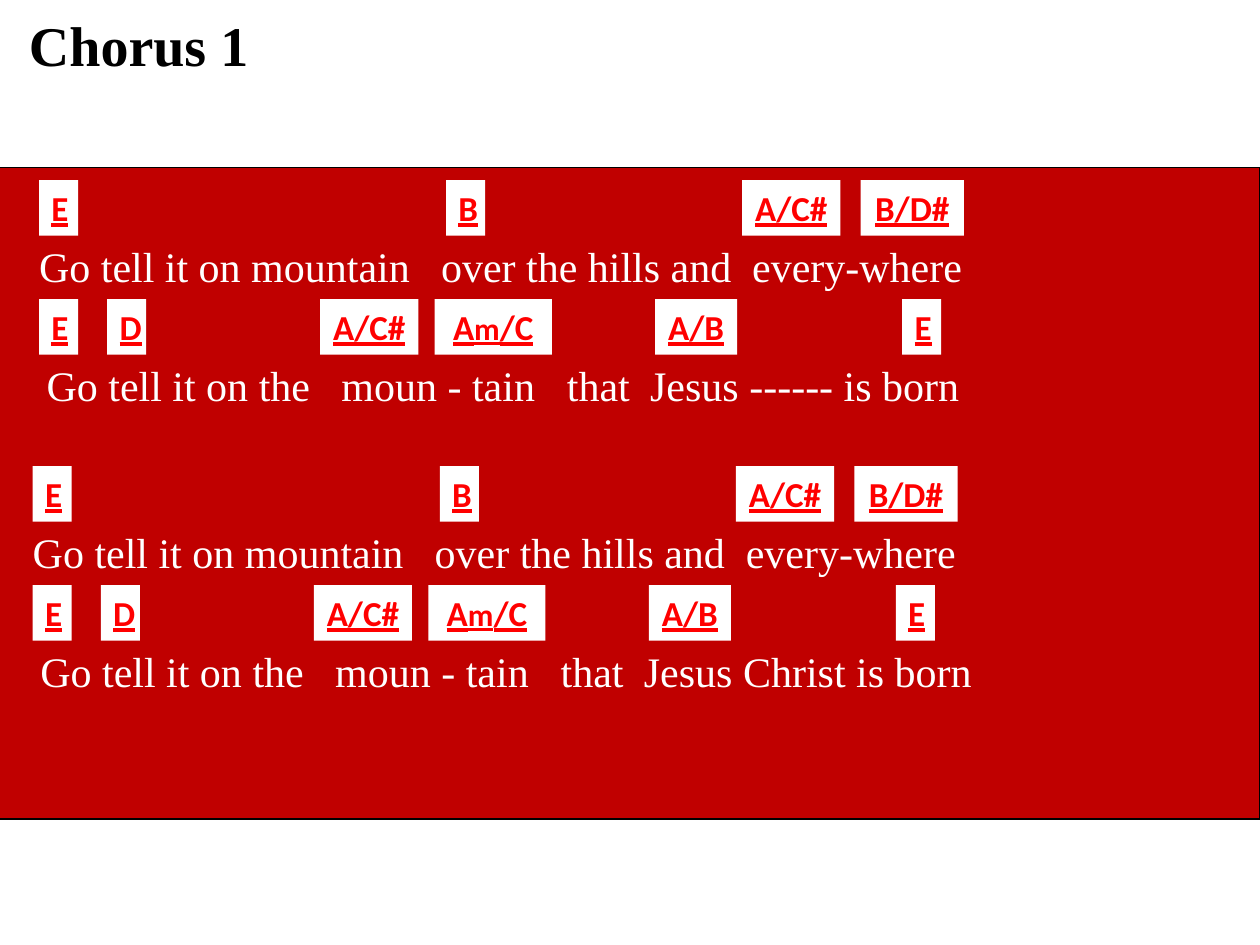
from dataclasses import dataclass

import pptx
import pptx.dml.color
import pptx.enum.shapes
import pptx.enum.text
import pptx.oxml.ns
import pptx.util
from lxml import etree

RGBColor = pptx.dml.color.RGBColor
ALIGN = pptx.enum.text.PP_ALIGN
WHITE = RGBColor(0xFF, 0xFF, 0xFF)
BLACK = RGBColor(0x00, 0x00, 0x00)
RED = RGBColor(0xFF, 0x00, 0x00)
DARK_RED = RGBColor(0xC0, 0x00, 0x00)
SERIF, SANS = "Times New Roman", "Calibri"

# Grid of 100 columns by 75 rows
prs = pptx.Presentation()
prs.slide_width, prs.slide_height = pptx.util.Inches(10), pptx.util.Inches(7.5)
COL, ROW = prs.slide_width / 100, prs.slide_height / 75

CHORD_COLS = {"E": 3.1, "B": 3.1, "D": 3.1, "A/C#": 7.8,
              "B/D#": 8.2, "A/B": 6.5, "Am/C": 9.3}
CHORD_ROWS = 4.4
LINE_PITCH = 9.45


@dataclass(frozen=True)
class Line:
    left: float                          # first letter, in columns
    phrases: tuple[str, ...]
    tabs: tuple[float, ...]              # later phrases, in columns from left
    chords: tuple[tuple[str, float], ...]


@dataclass(frozen=True)
class Verse:
    left: float
    top: float
    lines: tuple[Line, ...]


def cols(n: float) -> int:
    return round(n * COL)


def rows(n: float) -> int:
    return round(n * ROW)


def place(sp, left: float, top: float, width: float, height: float) -> None:
    sp.left, sp.top, sp.width, sp.height = cols(left), rows(top), cols(width), rows(height)


def write(sp, *parts: tuple[str, float], font: str, color: RGBColor,
          bold: bool = False, underline: bool = False, align=ALIGN.LEFT):
    """Fill a shape with one paragraph; each part is (text, point size)."""
    tf = sp.text_frame
    tf.word_wrap = True
    tf.auto_size = pptx.enum.text.MSO_AUTO_SIZE.SHAPE_TO_FIT_TEXT
    tf.vertical_anchor = pptx.enum.text.MSO_ANCHOR.TOP
    p = tf.paragraphs[0]
    p.alignment = align
    for text, size in parts:
        r = p.add_run()
        r.text = text
        f = r.font
        f.name, f.size, f.bold, f.underline = font, pptx.util.Pt(size), bold, underline
        f.color.rgb = color
    return p


def add_rect(s, left: float, top: float, width: float, height: float, fill: RGBColor):
    sp = s.shapes.add_shape(pptx.enum.shapes.MSO_SHAPE.RECTANGLE, 0, 0, 0, 0)
    place(sp, left, top, width, height)
    sp.shadow.inherit = False
    sp.fill.solid()
    sp.fill.fore_color.rgb = fill
    sp.line.fill.background()
    return sp


def add_lyric(s, line: Line, left: float, top: float) -> None:
    sp = s.shapes.add_textbox(0, 0, 0, 0)
    place(sp, left, top, 100 - left, 5)
    sp.text_frame.margin_left = 0
    p = write(sp, ("\t".join(line.phrases), 24), font=SERIF, color=WHITE)
    qn = pptx.oxml.ns.qn
    tab_list = etree.SubElement(p._p.get_or_add_pPr(), qn("a:tabLst"))
    for tab in line.tabs:
        etree.SubElement(tab_list, qn("a:tab"), pos=str(cols(tab)), algn="l")


def add_chord(s, name: str, left: float, top: float) -> None:
    sp = add_rect(s, left, top, CHORD_COLS[name], CHORD_ROWS, WHITE)
    # The minor mark is slightly smaller than the rest
    root, minor, bass = name.partition("m")
    parts = [(root, 20), (minor, 18), (bass, 20)]
    write(sp, *[part for part in parts if part[0]], font=SANS, color=RED,
          bold=True, underline=True, align=ALIGN.CENTER)


def add_verse(s, verse: Verse) -> None:
    for i, line in enumerate(verse.lines):
        top = verse.top + i * LINE_PITCH
        add_lyric(s, line, verse.left + line.left, top + CHORD_ROWS - 0.1)
        for name, left in line.chords:
            add_chord(s, name, verse.left + left, top)


def closing_line(word: str) -> Line:
    return Line(0.6, ("Go tell it on the", "moun - tain", "that", f"Jesus {word} is born"),
                (23.4, 41.3, 47.9),
                (("E", 0), ("D", 5.4), ("A/C#", 22.3), ("Am/C", 31.4),
                 ("A/B", 48.9), ("E", 68.5)))


OPENING = Line(0, ("Go tell it on mountain", "over the hills and", "every-where"),
               (31.9, 56.6),
               (("E", 0), ("B", 32.3), ("A/C#", 55.8), ("B/D#", 65.2)))
VERSES = (Verse(3.1, 14.3, (OPENING, closing_line("------"))),
          Verse(2.6, 37, (OPENING, closing_line("Christ"))))


def main() -> None:
    s = prs.slides.add_slide(prs.slide_layouts[5])

    # Title
    title = s.shapes.title
    place(title, 1.3, 0.3, 33.3, 6.4)
    title.fill.solid()
    title.fill.fore_color.rgb = WHITE
    write(title, ("Chorus 1", 32), font=SERIF, color=BLACK, bold=True)

    # Red panel
    panel = add_rect(s, -0.2, 13.3, 100.2, 51.7, DARK_RED)
    panel.line.color.rgb = BLACK
    panel.line.width = pptx.util.Pt(0.75)

    # Lyrics with chords above
    for verse in VERSES:
        add_verse(s, verse)

    prs.save("out.pptx")


if __name__ == "__main__":
    main()
